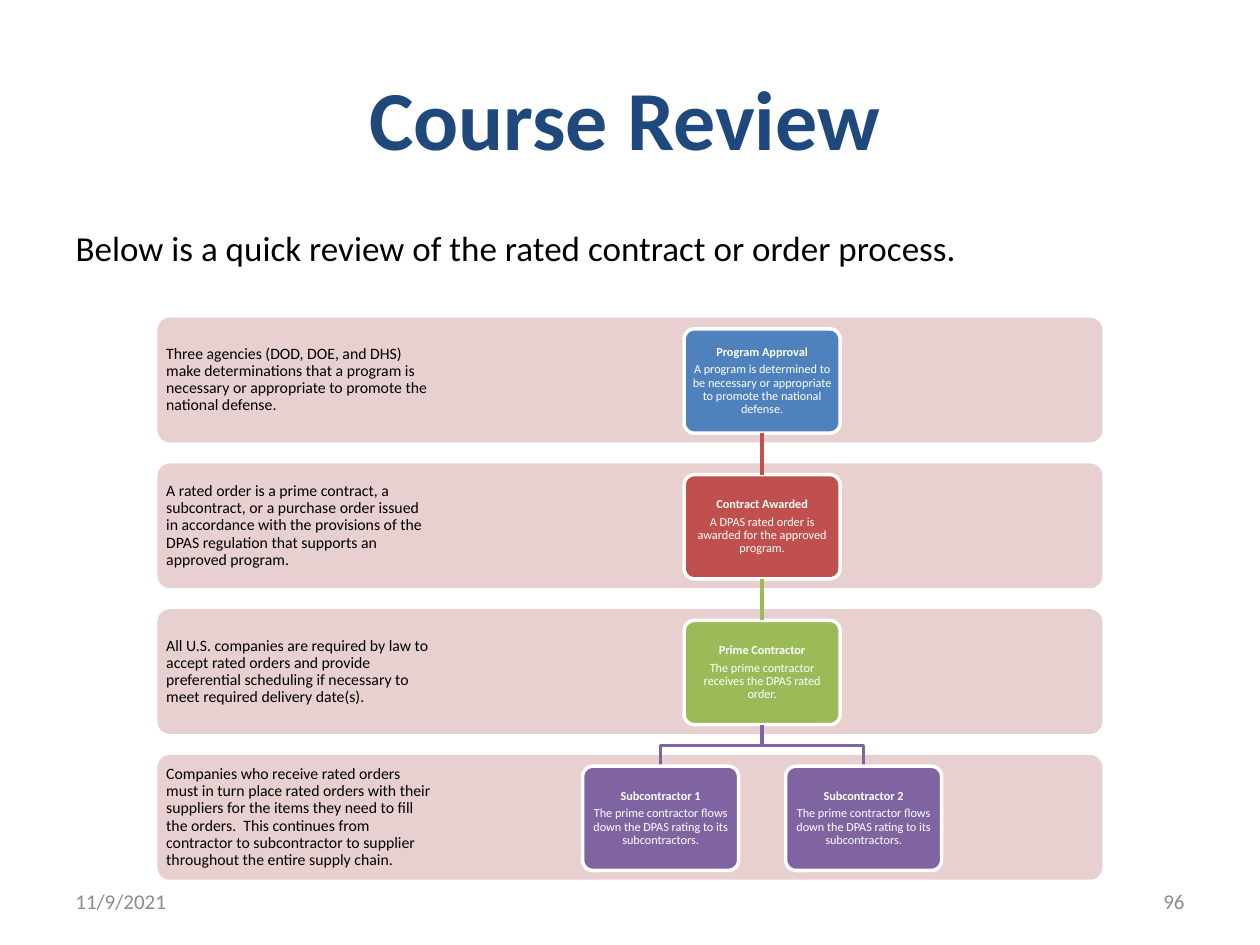
from pptx import Presentation
from pptx.dml.color import RGBColor
from pptx.enum.shapes import MSO_CONNECTOR, MSO_SHAPE
from pptx.enum.text import MSO_ANCHOR, PP_ALIGN
from pptx.oxml.ns import qn
from pptx.util import Pt

LEFT, CENTER, RIGHT = PP_ALIGN.LEFT, PP_ALIGN.CENTER, PP_ALIGN.RIGHT
MIDDLE, TOP = MSO_ANCHOR.MIDDLE, MSO_ANCHOR.TOP
ROUND, STRAIGHT = MSO_SHAPE.ROUNDED_RECTANGLE, MSO_CONNECTOR.STRAIGHT

ROW_X, ROW_Y, ROW_W, ROW_H, STEP = 90, 181.5, 540, 71.3, 83.3
CARD_W, CARD_H, CARD_DY = 89.2, 59.6, 6.4
MID_X, SUB_DX = 435.5, 58
BLUE, RED, GREEN, PURPLE = "4F81BD", "C0504D", "9BBB59", "8064A2"
WHITE, BLACK, GRAY, NAVY, PINK = "FFFFFF", "000000", "8C8C8C", "1F497D", "E8D0D0"

NOTES = [
    "Three agencies (DOD, DOE, and DHS) make determinations that a program is "
    "necessary or appropriate to promote the national defense.",
    "A rated order is a prime contract, a subcontract, or a purchase order issued "
    "in accordance with the provisions of the DPAS regulation that supports an "
    "approved program.",
    "All U.S. companies are required by law to accept rated orders and provide "
    "preferential scheduling if necessary to meet required delivery date(s).",
    "Companies who receive rated orders must in turn place rated orders with their "
    "suppliers for the items they need to fill the orders.  This continues from "
    "contractor to subcontractor to supplier throughout the entire supply chain.",
]
STAGES = [
    ("Program Approval", "A program is determined to be necessary or appropriate "
     "to promote the national defense.", BLUE),
    ("Contract Awarded", "A DPAS rated order is awarded for the approved program.", RED),
    ("Prime Contractor", "The prime contractor receives the DPAS rated order.", GREEN),
]
FLOW = "The prime contractor flows down the DPAS rating to its subcontractors."


def color(code):
    return RGBColor.from_string(code)


def place(shape, x, y, w, h):
    shape.left, shape.top, shape.width, shape.height = Pt(x), Pt(y), Pt(w), Pt(h)


def inset(frame, gap):
    frame.margin_left = frame.margin_right = Pt(gap)
    frame.margin_top = frame.margin_bottom = Pt(gap)


def write(frame, text, size, code, align=LEFT, anchor=MIDDLE, bold=False):
    frame.text = text
    frame.word_wrap = True
    frame.vertical_anchor = anchor
    for para in frame.paragraphs:
        para.alignment = align
        for run in para.runs:
            font = run.font
            font.name, font.size, font.bold = "Calibri", Pt(size), bold
            font.color.rgb = color(code)


def add_label(slide, x, y, w, h, text, size, code, align=LEFT):
    box = slide.shapes.add_textbox(Pt(x), Pt(y), Pt(w), Pt(h))
    write(box.text_frame, text, size, code, align)
    return box.text_frame


def add_panel(slide, x, y, w, h, fill):
    panel = slide.shapes.add_shape(ROUND, Pt(x), Pt(y), Pt(w), Pt(h))
    panel.adjustments[0] = 0.1
    panel.shadow.inherit = False
    panel.fill.solid()
    panel.fill.fore_color.rgb = color(fill)
    panel.line.fill.background()
    return panel


def add_row(slide, y, note):
    add_panel(slide, ROW_X, y, ROW_W, ROW_H, PINK)
    frame = add_label(slide, ROW_X, y, 162, ROW_H, note, 9, BLACK)
    inset(frame, 5)
    frame.paragraphs[0].line_spacing = 0.9


def add_card(slide, mid, y, head, body, fill):
    card = add_panel(slide, mid - CARD_W / 2, y, CARD_W, CARD_H, fill)
    card.line.color.rgb = color(WHITE)
    card.line.width = Pt(2)
    frame = card.text_frame
    write(frame, f"{head}\n{body}", 7, WHITE, CENTER)
    inset(frame, 2.2)
    for para in frame.paragraphs:
        para.line_spacing = 0.9
        para.space_after = Pt(2.5)
    frame.paragraphs[0].runs[0].font.bold = True
    return card


def add_link(slide, upper, lower, code):
    link = slide.shapes.add_connector(STRAIGHT, 0, 0, 0, 0)
    link.begin_connect(upper, 2)
    link.end_connect(lower, 0)
    link.line.color.rgb = color(code)
    link.line.width = Pt(2)
    props = link._element.spPr
    props.append(props.makeelement(qn("a:effectLst"), {}))


def add_branch(slide, y, end_x, code):
    """Draw a stepped line from the middle column down to a card at end_x."""
    low = y + STEP - CARD_H
    bend = (y + low) / 2
    path = slide.shapes.build_freeform(Pt(MID_X), Pt(y))
    path.add_line_segments(
        [(Pt(MID_X), Pt(bend)), (Pt(end_x), Pt(bend)), (Pt(end_x), Pt(low))],
        close=False)
    line = path.convert_to_shape()
    line.shadow.inherit = False
    line.fill.background()
    line.line.color.rgb = color(code)
    line.line.width = Pt(2)


def add_heads(slide):
    title, body = slide.shapes.title, slide.placeholders[1]
    place(title, 144, 21.6, 426, 90)
    write(title.text_frame, "Course Review", 48, NAVY, CENTER, bold=True)
    place(body, 36, 126, 648, 356.4)
    write(body.text_frame,
          "Below is a quick review of the rated contract or order process.",
          20, BLACK, anchor=TOP)
    para = body.text_frame.paragraphs[0]
    para.space_before = Pt(0)
    props = para._p.get_or_add_pPr()
    props.set("marL", "0")
    props.set("indent", "0")
    props.append(props.makeelement(qn("a:buNone"), {}))


def add_chain(slide):
    tops = [ROW_Y + CARD_DY + i * STEP for i in range(len(NOTES))]
    cards = [add_card(slide, MID_X, y, *stage) for y, stage in zip(tops, STAGES)]
    for upper, lower, stage in zip(cards, cards[1:], STAGES[1:]):
        add_link(slide, upper, lower, stage[2])
    for num, side in enumerate((-1, 1), 1):
        mid = MID_X + side * SUB_DX
        add_branch(slide, tops[2] + CARD_H, mid, PURPLE)
        add_card(slide, mid, tops[3], f"Subcontractor {num}", FLOW, PURPLE)


def main():
    deck = Presentation()
    deck.slide_width, deck.slide_height = Pt(720), Pt(540)
    slide = deck.slides.add_slide(deck.slide_layouts[1])
    add_heads(slide)
    for i, note in enumerate(NOTES):
        add_row(slide, ROW_Y + i * STEP, note)
    add_chain(slide)
    add_label(slide, 36, 500.5, 168, 28.8, "11/9/2021", 12, GRAY)
    add_label(slide, 516, 500.5, 168, 28.8, "96", 12, GRAY, RIGHT)
    deck.save("out.pptx")


if __name__ == "__main__":
    main()
